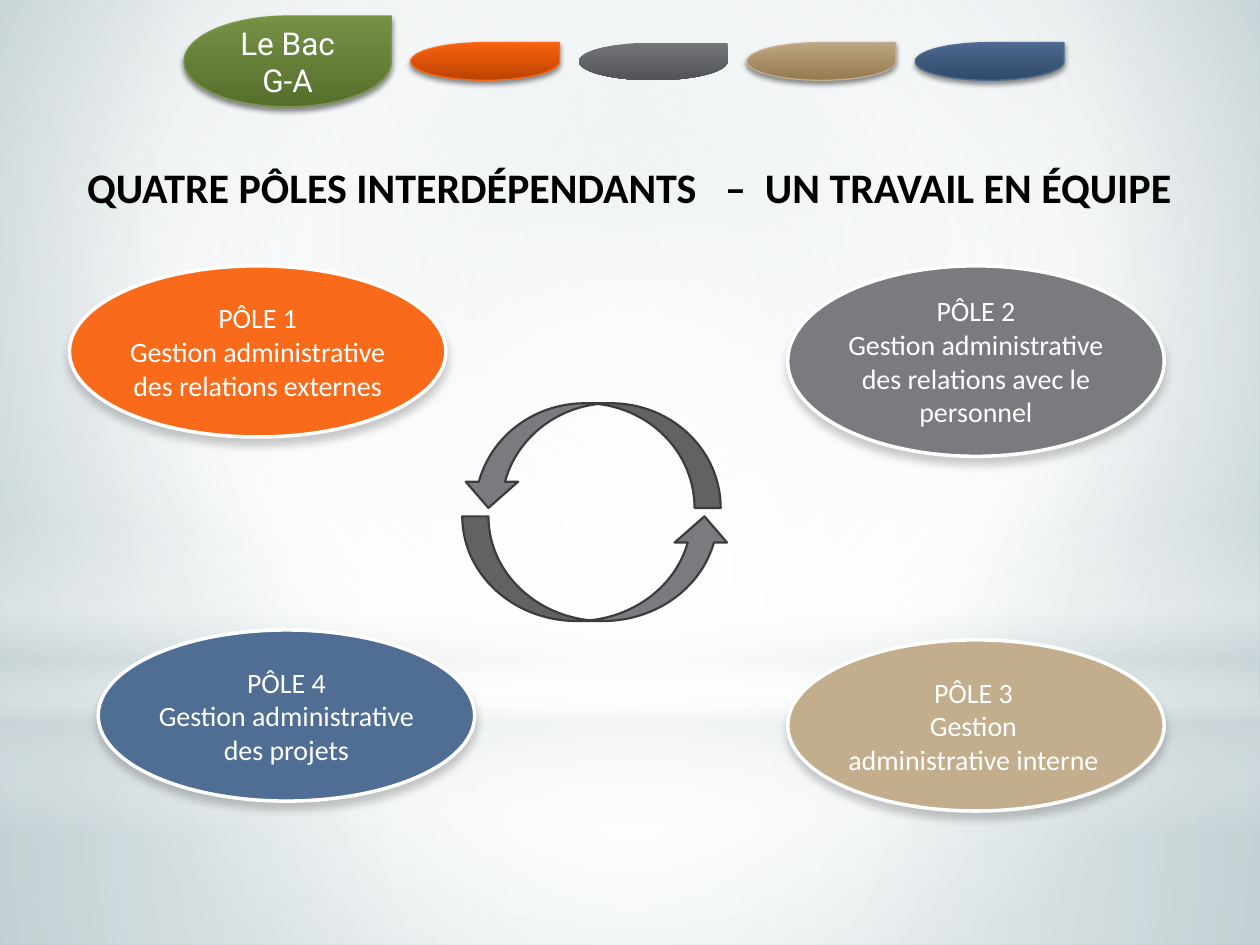
from lxml.etree import SubElement
from pptx import Presentation
from pptx.dml.color import RGBColor
from pptx.enum.shapes import MSO_SHAPE as Preset
from pptx.enum.text import MSO_ANCHOR as Anchor, PP_ALIGN as Align
from pptx.oxml.ns import qn
from pptx.util import Cm, Pt

HEADING = "QUATRE PÔLES INTERDÉPENDANTS   –  UN TRAVAIL EN ÉQUIPE"
WHITE, BLACK, GREY, MIST = "FFFFFF", "000000", "797B7E", "CDD7D9"
CENTRE = (50, 50, 50, 50)
BACKGROUND = [(0, "C2D0D3", 100), (60, WHITE, 100), (100, "9AB5BA", 100)]
GLOWS = [
    (Preset.RECTANGLE, 14.17, 4.88, CENTRE,
     [(0, WHITE, 91), (37, WHITE, 76), (100, MIST, 79)]),
    (Preset.RECTANGLE, 0, 14.17, CENTRE,
     [(0, WHITE, 89), (48, WHITE, 62), (100, MIST, 79)]),
    (Preset.RECTANGLE, 10.46, 6.35, None,
     [(0, WHITE, 0), (29, WHITE, 30), (45, MIST, 40),
      (55, WHITE, 26), (65, MIST, 60), (100, WHITE, 0)]),
    (Preset.OVAL, 4.45, 14.17, CENTRE, [(0, WHITE, 100), (56, WHITE, 0)]),
]
TABS = [
    ("Le Bac G-A", "769046", "566E2C", "7C984A"),
    ("", "F9610E", "BB4300", "F96A1B"),
    ("", "737578", "525356", None),
    ("", "BCA582", "947950", "C2AD8D"),
    ("", "4C688D", "314A6A", "506E94"),
]
TAB_LEFT, TAB_MIDDLE, TAB_GAP = 3.71, 1.24, 0.39
ACTIVE_TAB, SMALL_TAB = (4.18, 1.83), (3, 0.76)
TAB_SHADOW, POLE_SHADOW = (45, 3.1, 1.8), (20, 5, 4)
ARROWS = [
    (Preset.CURVED_DOWN_ARROW, 8.13, 5.21, True),
    (Preset.CURVED_UP_ARROW, 10.41, 5.41, False),
]
POLES = [
    ("PÔLE 1", "Gestion administrative des relations externes",
     "F96A1B", (1.4, 5.36), 3.45, (0, 0.2, 0, 0.2)),
    ("PÔLE 2", "Gestion administrative des relations avec le personnel",
     GREY, (15.88, 5.36), 3.84, (0, 0, 0, 0)),
    ("PÔLE 4", "Gestion administrative des projets",
     "506E94", (1.98, 12.7), 3.45, (0, 0.2, 0, 0.2)),
    ("PÔLE 3", "Gestion administrative interne",
     "C2AD8D", (15.88, 12.9), 3.45, (0.1, 0.2, 0.2, 0.2)),
]


def add_colour(parent, colour, alpha):
    node = SubElement(parent, qn("a:srgbClr"), val=colour)
    SubElement(node, qn("a:alpha"), val=str(alpha * 1000))


def set_gradient(fill, properties, stops, centre=None):
    fill.solid()
    fill.fore_color.rgb = RGBColor.from_string(WHITE)
    solid = properties.find(qn("a:solidFill"))
    gradient = SubElement(properties, qn("a:gradFill"), rotWithShape="1")
    properties.replace(solid, gradient)
    stop_list = SubElement(gradient, qn("a:gsLst"))
    for position, colour, alpha in stops:
        stop = SubElement(stop_list, qn("a:gs"), pos=str(position * 1000))
        add_colour(stop, colour, alpha)
    if centre:
        radial = SubElement(gradient, qn("a:path"), path="circle")
        sides = {side: str(part * 1000) for side, part in zip("ltrb", centre)}
        SubElement(radial, qn("a:fillToRect"), **sides)
    else:
        SubElement(gradient, qn("a:lin"), ang="5400000", scaled="0")


def add_preset(slide, preset, box, fill=None, line=None, width=0, shadow=None):
    shape = slide.shapes.add_shape(preset, *map(Cm, box))
    if fill:
        shape.fill.solid()
        shape.fill.fore_color.rgb = RGBColor.from_string(fill)
    if line:
        shape.line.color.rgb = RGBColor.from_string(line)
        shape.line.width = Pt(width)
    else:
        shape.line.fill.background()
    shape.shadow.inherit = False
    if shadow:
        alpha, blur, distance = shadow
        outer = SubElement(
            shape._element.spPr.find(qn("a:effectLst")), qn("a:outerShdw"),
            blurRad=str(Pt(blur)), dist=str(Pt(distance)), dir="5400000",
            algn="ctr", rotWithShape="0")
        add_colour(outer, BLACK, alpha)
    return shape


def write(shape, text, font, size, colour, align=Align.CENTER, bold=False):
    frame = shape.text_frame
    frame.text = text
    frame.word_wrap = True
    frame.vertical_anchor = Anchor.MIDDLE
    for paragraph in frame.paragraphs:
        paragraph.alignment = align
        for run in paragraph.runs:
            run.font.name = font
            run.font.size = Pt(size)
            run.font.bold = bold
            run.font.color.rgb = RGBColor.from_string(colour)


def add_backdrop(slide):
    background = slide.background.fill
    background.solid()
    properties = slide._element.find(".//" + qn("p:bgPr"))
    set_gradient(background, properties, BACKGROUND, (20, 10, 20, 60))
    for preset, top, height, centre, stops in GLOWS:
        glow = add_preset(slide, preset, (0, top, 25.4, height))
        set_gradient(glow.fill, glow._element.spPr, stops, centre)


def add_tabs(slide):
    left = TAB_LEFT
    for label, light, dark, edge in TABS:
        width, height = ACTIVE_TAB if label else SMALL_TAB
        box = (left, TAB_MIDDLE - height / 2, width, height)
        tab = add_preset(slide, Preset.TEAR, box, line=edge, width=0.75,
                         shadow=TAB_SHADOW if edge else None)
        set_gradient(tab.fill, tab._element.spPr,
                     [(0, light, 100), (100, dark, 100)])
        if label:
            write(tab, label, "Roboto", 18, WHITE)
        left += width + TAB_GAP


def add_cycle(slide):
    for preset, top, width, mirrored in ARROWS:
        arrow = add_preset(slide, preset, (9.32, top, width, 2.11),
                           GREY, "3B3C3E", 1.25)
        if mirrored:
            arrow._element.spPr.xfrm.set("flipH", "1")


def add_poles(slide):
    for name, role, colour, corner, height, margins in POLES:
        pole = add_preset(slide, Preset.OVAL, (*corner, 7.59, height),
                          colour, WHITE, 2, POLE_SHADOW)
        write(pole, f"{name}\n{role}", "Calibri", 16, WHITE)
        frame = pole.text_frame
        (frame.margin_left, frame.margin_top,
         frame.margin_right, frame.margin_bottom) = map(Cm, margins)


def add_heading(slide):
    heading = slide.shapes.title
    heading.left, heading.top = Cm(1.5), Cm(3.12)
    heading.width, heading.height = Cm(22.6), Cm(1.27)
    write(heading, HEADING, "Calibri", 24, BLACK, Align.LEFT, True)
    slide.shapes._spTree.append(heading._element)


def main():
    """Build the slide of the four interdependent poles."""
    deck = Presentation()
    deck.slide_width, deck.slide_height = Cm(25.4), Cm(19.05)
    slide = deck.slides.add_slide(deck.slide_layouts[5])
    add_backdrop(slide)
    add_tabs(slide)
    add_cycle(slide)
    add_poles(slide)
    add_heading(slide)
    deck.save("out.pptx")


if __name__ == "__main__":
    main()
